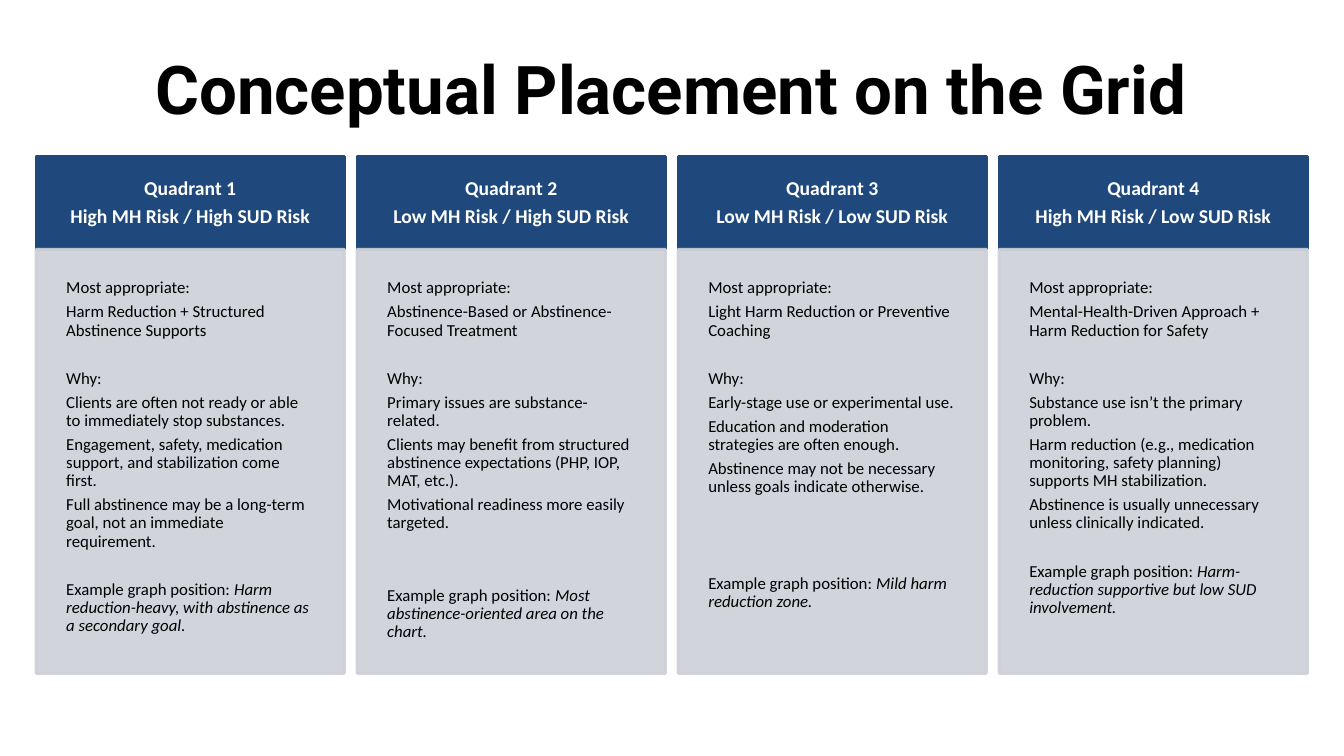
"""Builds the quadrant placement slide."""
import pptx
import pptx.dml.color
import pptx.enum.shapes
import pptx.enum.text
import pptx.oxml.ns
import pptx.util
from lxml import etree

Cm = pptx.util.Cm
Pt = pptx.util.Pt
RGBColor = pptx.dml.color.RGBColor
Align = pptx.enum.text.PP_ALIGN
Anchor = pptx.enum.text.MSO_ANCHOR

NAVY = RGBColor(0x1F, 0x49, 0x7D)
GREY = RGBColor(0xCD, 0xD0, 0xD7)
WHITE = RGBColor(0xFF, 0xFF, 0xFF)
BLACK = RGBColor(0x00, 0x00, 0x00)

TITLE_FONT = {"name": "Roboto", "size": Pt(48), "bold": True}
HEADING_FONT = {"name": "Calibri", "size": Pt(14), "bold": True}
BODY_FONT = {"name": "Calibri", "size": Pt(12), "bold": False}
EXAMPLE_FONT = {**BODY_FONT, "italic": True}

SECTION_GAP = 17.4
COLUMN_GAP = Cm(0.32)
HEADING_HEIGHT = Cm(2.33)

QUADRANTS = [
    {
        "risks": "High MH Risk / High SUD Risk",
        "approach": "Harm Reduction + Structured Abstinence Supports",
        "reasons": [
            "Clients are often not ready or able to immediately stop substances.",
            "Engagement, safety, medication support, and stabilization come first.",
            "Full abstinence may be a long-term goal, not an immediate requirement.",
        ],
        "example": "Harm reduction-heavy, with abstinence as a secondary goal.",
        "example_gaps": 1,
    },
    {
        "risks": "Low MH Risk / High SUD Risk",
        "approach": "Abstinence-Based or Abstinence-Focused Treatment",
        "reasons": [
            "Primary issues are substance-related.",
            "Clients may benefit from structured abstinence expectations (PHP, IOP, MAT, etc.).",
            "Motivational readiness more easily targeted.",
        ],
        "example": "Most abstinence-oriented area on the chart.",
        "example_gaps": 2,
    },
    {
        "risks": "Low MH Risk / Low SUD Risk",
        "approach": "Light Harm Reduction or Preventive Coaching",
        "reasons": [
            "Early-stage use or experimental use.",
            "Education and moderation strategies are often enough.",
            "Abstinence may not be necessary unless goals indicate otherwise.",
        ],
        "example": "Mild harm reduction zone.",
        "example_gaps": 3,
    },
    {
        "risks": "High MH Risk / Low SUD Risk",
        "approach": "Mental-Health-Driven Approach + Harm Reduction for Safety",
        "reasons": [
            "Substance use isn’t the primary problem.",
            "Harm reduction (e.g., medication monitoring, safety planning) supports MH stabilization.",
            "Abstinence is usually unnecessary unless clinically indicated.",
        ],
        "example": "Harm-reduction supportive but low SUD involvement.",
        "example_gaps": 1,
    },
]


def apply_format(target, values):
    """Set each attribute named in values on target."""
    for attribute, value in values.items():
        setattr(target, attribute, value)


def add_words(paragraph, words, font, color):
    """Append one formatted run to a paragraph."""
    run = paragraph.add_run()
    run.text = words
    apply_format(run.font, font)
    run.font.color.rgb = color


def write_lines(frame, lines, alignment, color):
    """Write (gaps before, runs) lines, each run being (words, font)."""
    for index, (gaps, runs) in enumerate(lines):
        paragraph = frame.add_paragraph() if index else frame.paragraphs[0]
        size = runs[0][1]["size"].pt
        apply_format(paragraph, {
            "alignment": alignment,
            "line_spacing": 0.9,
            "space_before": Pt(gaps * SECTION_GAP),
            "space_after": Pt(round(size * 0.35, 1)),
        })
        for words, font in runs:
            add_words(paragraph, words, font, color)


def add_panel(slide, box, color, inset, anchor, opacity=100):
    """Add a filled rectangle and return its text frame."""
    panel = slide.shapes.add_shape(pptx.enum.shapes.MSO_SHAPE.RECTANGLE, *box)
    panel.shadow.inherit = False
    panel.line.width = Pt(2)
    for fill in (panel.fill, panel.line.fill):
        fill.solid()
        fill.fore_color.rgb = color
    if opacity < 100:
        for tint in panel.element.spPr.iter(pptx.oxml.ns.qn("a:srgbClr")):
            alpha = etree.SubElement(tint, pptx.oxml.ns.qn("a:alpha"))
            alpha.set("val", str(opacity * 1000))
    apply_format(panel.text_frame, {
        "word_wrap": True,
        "vertical_anchor": anchor,
        "margin_left": inset,
        "margin_right": inset,
        "margin_top": inset,
        "margin_bottom": inset,
    })
    return panel.text_frame


def add_title(slide, box, words):
    """Place and format the slide title."""
    title = slide.shapes.title
    apply_format(title, dict(zip(("left", "top", "width", "height"), box)))
    apply_format(title.text_frame, {"word_wrap": True, "vertical_anchor": Anchor.MIDDLE})
    paragraph = title.text_frame.paragraphs[0]
    paragraph.alignment = Align.CENTER
    add_words(paragraph, words, TITLE_FONT, BLACK)


def add_quadrant(slide, box, number, quadrant):
    """Draw one quadrant column: heading above, explanation below."""
    left, top, width, height = box
    heading = add_panel(slide, (left, top, width, HEADING_HEIGHT), NAVY, Cm(0.61), Anchor.MIDDLE)
    heading_lines = [f"Quadrant {number}", quadrant["risks"]]
    write_lines(heading, [(0, [(line, HEADING_FONT)]) for line in heading_lines],
                Align.CENTER, WHITE)

    body_box = (left, top + HEADING_HEIGHT, width, height - HEADING_HEIGHT)
    body = add_panel(slide, body_box, GREY, Cm(0.76), Anchor.TOP, opacity=90)
    lines = [
        (0, [("Most appropriate:", BODY_FONT)]),
        (0, [(quadrant["approach"], BODY_FONT)]),
        (1, [("Why:", BODY_FONT)]),
        *((0, [(reason, BODY_FONT)]) for reason in quadrant["reasons"]),
        (quadrant["example_gaps"], [("Example graph position: ", BODY_FONT),
                                    (quadrant["example"], EXAMPLE_FONT)]),
    ]
    write_lines(body, lines, Align.LEFT, BLACK)


def add_grid(slide, box):
    """Share the box equally between the quadrant columns."""
    left, top, width, height = box
    column_width = (width - COLUMN_GAP * (len(QUADRANTS) - 1)) // len(QUADRANTS)
    for index, quadrant in enumerate(QUADRANTS):
        column_left = left + index * (column_width + COLUMN_GAP)
        add_quadrant(slide, (column_left, top, column_width, height), index + 1, quadrant)


def main():
    """Build and save the presentation."""
    deck = pptx.Presentation()
    apply_format(deck, {"slide_width": Cm(33.87), "slide_height": Cm(19.05)})
    slide = deck.slides.add_slide(deck.slide_layouts.get_by_name("Title Only"))
    add_title(slide, (Cm(2.31), Cm(0.64), Cm(29.21), Cm(3.15)),
              "Conceptual Placement on the Grid")
    add_grid(slide, (Cm(0.91), Cm(3.95), Cm(32.04), Cm(13.02)))
    deck.save("out.pptx")


if __name__ == "__main__":
    main()
